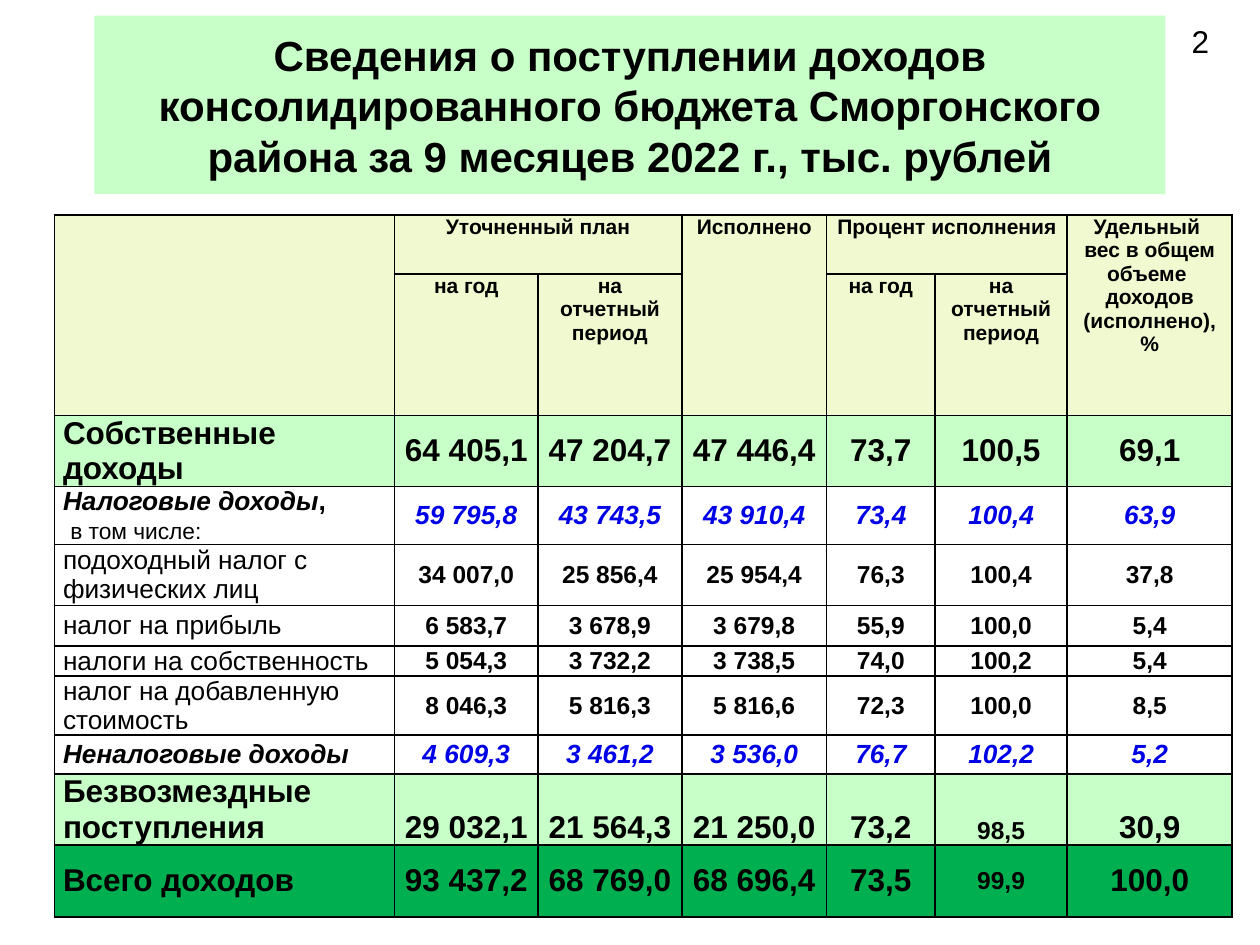
from lxml import etree
from pptx import Presentation
from pptx.dml.color import RGBColor
from pptx.enum import shapes, text
from pptx.oxml import ns
from pptx.util import Pt

COLORS = {"black": "000000", "blue": "0000E6", "white": "FFFFFF",
          "header": "F0F9CF", "mint": "C8FFC8", "green": "00B050"}
COLUMNS = [194.4, 82.1, 82.1, 82.8, 61.9, 75.6, 94.3]
ROWS = [33.7, 80.6, 40.6, 33.2, 34.8, 23, 17.3, 33.7, 22.3, 40.6, 41]
CENTER, LEFT = text.PP_ALIGN.CENTER, text.PP_ALIGN.LEFT
TOP, MIDDLE, BOTTOM = (text.MSO_ANCHOR.TOP, text.MSO_ANCHOR.MIDDLE,
                       text.MSO_ANCHOR.BOTTOM)

HEADERS = [
    (0, 0, 2, 1, []),
    (0, 1, 1, 2, ["Уточненный план"]),
    (0, 3, 2, 1, ["Исполнено"]),
    (0, 4, 1, 2, ["Процент исполнения"]),
    (0, 6, 2, 1, ["Удельный ", "вес в общем объеме ", "доходов (исполнено), %"]),
    (1, 1, 1, 1, ["на год"]),
    (1, 2, 1, 1, ["на отчетный период"]),
    (1, 4, 1, 1, ["на год"]),
    (1, 5, 1, 1, ["на отчетный период"]),
]

BOLD = {"bold": True}
ITALIC = {"size": 15, "bold": True, "italic": True}
TOTAL = {"size": 18, "bold": True}
ITEM = {"size": 15}
ITEM_VALUE = {"size": 14, "bold": True}
GROUP_VALUE = {**ITALIC, "color": "blue"}

TAX_LABEL = [[("Налоговые доходы", ITALIC), (",", {"size": 15, **BOLD})],
             [(" ", {"size": 15, **BOLD}), ("в том числе:", {"size": 13})]]


def label(words, style):
    """Return a label of one paragraph with one run."""
    return [[(words, style)]]


BODY = [
    (label("Собственные доходы", TOTAL), TOTAL, "mint", MIDDLE,
     ["64 405,1", "47 204,7", "47 446,4", "73,7", "100,5", "69,1"]),
    (TAX_LABEL, GROUP_VALUE, "white", MIDDLE,
     ["59 795,8", "43 743,5", "43 910,4", "73,4", "100,4", "63,9"]),
    (label("подоходный налог с физических лиц", ITEM), ITEM_VALUE, "white", MIDDLE,
     ["34 007,0", "25 856,4", "25 954,4", "76,3", "100,4", "37,8"]),
    (label("налог на прибыль", ITEM), ITEM_VALUE, "white", MIDDLE,
     ["6 583,7", "3 678,9", "3 679,8", "55,9", "100,0", "5,4"]),
    (label("налоги на собственность", ITEM), ITEM_VALUE, "white", MIDDLE,
     ["5 054,3", "3 732,2", "3 738,5", "74,0", "100,2", "5,4"]),
    (label("налог на добавленную стоимость ", ITEM), ITEM_VALUE, "white", MIDDLE,
     ["8 046,3", "5 816,3", "5 816,6", "72,3", "100,0", "8,5"]),
    (label("Неналоговые доходы", ITALIC), GROUP_VALUE, "white", MIDDLE,
     ["4 609,3", "3 461,2", "3 536,0", "76,7", "102,2", "5,2"]),
    (label("Безвозмездные поступления", TOTAL), TOTAL, "mint", BOTTOM,
     ["29 032,1", "21 564,3", "21 250,0", "73,2", "98,5", "30,9"]),
    (label("Всего доходов ", TOTAL), TOTAL, "green", MIDDLE,
     ["93 437,2", "68 769,0", "68 696,4", "73,5", "99,9", "100,0"]),
]


def rgb(name):
    """Look up a named colour."""
    return RGBColor.from_string(COLORS[name])


def write(frame, paragraphs, align=CENTER):
    """Fill a text frame with paragraphs of styled runs."""
    for index, runs in enumerate(paragraphs):
        paragraph = frame.paragraphs[0] if index == 0 else frame.add_paragraph()
        paragraph.alignment = align
        for words, style in runs:
            run = paragraph.add_run()
            run.text = words
            font = run.font
            font.name = "Arial"
            font.size = Pt(style["size"])
            font.bold = style.get("bold", False)
            font.italic = style.get("italic", False)
            font.color.rgb = rgb(style.get("color", "black"))


def format_cell(cell, fill):
    """Set the margins, the black borders and the fill of a cell."""
    cell.margin_left = cell.margin_right = Pt(5)
    cell.margin_top = cell.margin_bottom = 0
    properties = cell._tc.get_or_add_tcPr()
    for side in ("a:lnL", "a:lnR", "a:lnT", "a:lnB"):
        line = etree.SubElement(properties, ns.qn(side), w=str(Pt(1)))
        solid = etree.SubElement(line, ns.qn("a:solidFill"))
        etree.SubElement(solid, ns.qn("a:srgbClr"), val=COLORS["black"])
    cell.fill.solid()
    cell.fill.fore_color.rgb = rgb(fill)


def add_title(slide, left, top, width, height):
    """Add the title on its mint panel."""
    panel = slide.shapes.add_shape(shapes.MSO_SHAPE.RECTANGLE,
                                   Pt(left), Pt(top), Pt(width), Pt(height))
    panel.shadow.inherit = False
    panel.fill.solid()
    panel.fill.fore_color.rgb = rgb("mint")
    panel.line.fill.background()
    panel.text_frame.word_wrap = True
    panel.text_frame.vertical_anchor = MIDDLE
    words = ("Сведения о поступлении доходов консолидированного бюджета "
             "Сморгонского района за 9 месяцев 2022 г., тыс. рублей")
    write(panel.text_frame, label(words, {"size": 24, "bold": True}))


def add_page_number(slide, left, top, width, height):
    """Add the page number."""
    box = slide.shapes.add_textbox(Pt(left), Pt(top), Pt(width), Pt(height))
    box.text_frame.word_wrap = True
    write(box.text_frame, label("2", {"size": 18}))


def add_income_table(slide, left, top):
    """Add the table of income with its two header rows."""
    frame = slide.shapes.add_table(len(ROWS), len(COLUMNS), Pt(left), Pt(top),
                                   Pt(sum(COLUMNS)), Pt(sum(ROWS)))
    table = frame.table
    for column, width in zip(table.columns, COLUMNS):
        column.width = Pt(width)
    for row, height in zip(table.rows, ROWS):
        row.height = Pt(height)
    fills = ["header", "header"] + [entry[2] for entry in BODY]
    for row, fill in zip(table.rows, fills):
        for cell in row.cells:
            format_cell(cell, fill)
    for row, column, height, width, lines in HEADERS:
        cell = table.cell(row, column)
        if height * width > 1:
            cell.merge(table.cell(row + height - 1, column + width - 1))
        cell.vertical_anchor = TOP
        write(cell.text_frame, [[(line, {"size": 12, "bold": True})] for line in lines])
    for row, (name, style, _, anchor, values) in enumerate(BODY, 2):
        cell = table.cell(row, 0)
        cell.vertical_anchor = MIDDLE
        write(cell.text_frame, name, LEFT)
        for column, value in enumerate(values, 1):
            cell = table.cell(row, column)
            cell.vertical_anchor = anchor
            small = value in ("98,5", "99,9")
            write(cell.text_frame, label(value, ITEM_VALUE if small else style))


def main():
    """Build and save the presentation."""
    presentation = Presentation()
    presentation.slide_width, presentation.slide_height = Pt(720), Pt(540)
    slide = presentation.slides.add_slide(presentation.slide_layouts[6])
    add_income_table(slide, 31, 123)
    add_title(slide, 54, 9, 612, 102)
    add_page_number(slide, 672, 9, 28, 29)
    presentation.save("out.pptx")


if __name__ == "__main__":
    main()
